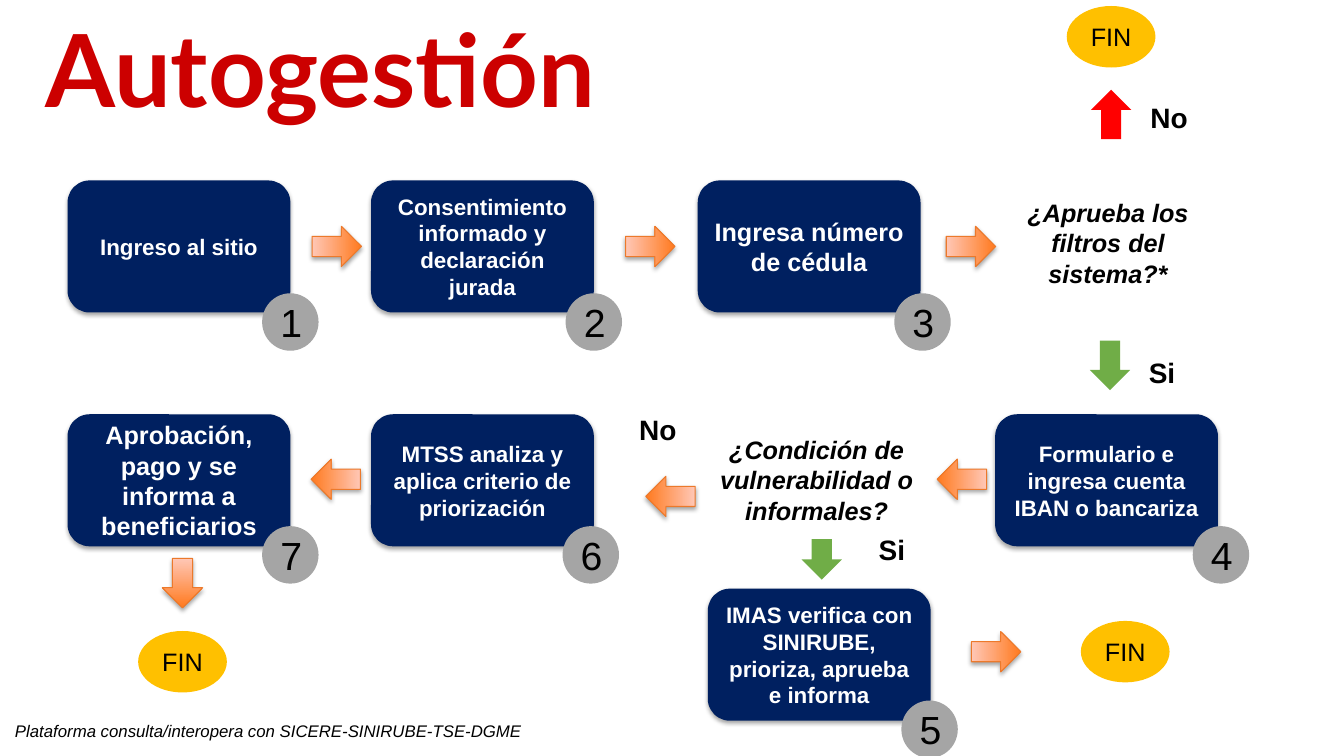
from lxml import etree
from pptx import Presentation
from pptx import util as u
from pptx.dml.color import RGBColor
from pptx.enum import shapes, text
from pptx.oxml.ns import qn

PX = u.Inches(1) // 100
HUES = {
    "title": "CC0000", "step": "002060", "badge": "A5A5A5", "end": "FFC000",
    "yes": "70AD47", "no": "FF0000", "tip": "FF7A1F", "tail": "FFC7B6",
    "edge": "EC792B", "black": "000000", "white": "FFFFFF",
}
KIND = shapes.MSO_SHAPE
MID = text.PP_ALIGN.CENTER
STEP_W, STEP_H = 221, 131

# left, top, words, size, badge left, badge top
STEPS = [
    (67, 179, "Ingreso al sitio", 16, 260, 291),
    (368, 179, "Consentimiento informado y declaración jurada", 16, 561, 291),
    (692, 179, "Ingresa número de cédula", 18, 887, 291),
    (987, 411, "Formulario e ingresa cuenta IBAN o bancariza", 16, 1183, 522),
    (702, 584, "IMAS verifica con SINIRUBE, prioriza, aprueba e informa", 16,
     894, 695),
    (368, 411, "MTSS analiza y aplica criterio de priorización", 16, 558, 522),
    (67, 411, "Aprobación, pago y se informa a beneficiarios", 18, 260, 522),
]
# left, top, turn
FLOWS = [
    (314, 220, 270), (625, 220, 270), (943, 220, 270),
    (934, 451, 90), (645, 468, 90), (313, 451, 90),
    (968, 622, 270), (161, 554, 0),
]
# left, top, height, turn, hue
FORKS = [(1081, 338, 49, 0, "yes"), (795, 535, 40, 0, "yes"),
         (1082, 89, 49, 180, "no")]
ENDS = [(1058, 6), (137, 626), (1072, 616)]
ASKS = [(981, 191, "¿Aprueba los filtros del sistema?*"),
        (692, 426, "¿Condición de vulnerabilidad o informales?")]
# left, top, width, words
LABELS = [(1127, 348, 51, "Si"), (1127, 95, 65, "No"),
          (620, 404, 65, "No"), (852, 523, 65, "Si")]


def hue(name):
    return RGBColor.from_string(HUES[name])


def write(shape, words, size, ink="black", bold=False, italic=False,
          align=MID, face="Arial"):
    frame = shape.text_frame
    frame.word_wrap = True
    para = frame.paragraphs[0]
    para.text = words
    para.alignment = align
    font = para.font
    font.name, font.size = face, u.Pt(size)
    font.bold, font.italic = bold, italic
    font.color.rgb = hue(ink)
    return frame


def add_form(slide, kind, box, fill=None):
    """Add a flat preset shape without outline or shadow."""
    shape = slide.shapes.add_shape(kind, *(n * PX for n in box))
    shape.shadow.inherit = False
    shape.line.fill.background()
    if fill:
        shape.fill.solid()
        shape.fill.fore_color.rgb = hue(fill)
    return shape


def add_text(slide, box, words, size, **style):
    shape = slide.shapes.add_textbox(*(n * PX for n in box))
    return write(shape, words, size, **style)


def cast(shape):
    """Give the shape a soft shadow straight below it."""
    effects = shape._element.spPr.find(qn("a:effectLst"))
    shade = etree.SubElement(effects, qn("a:outerShdw"), blurRad="40000",
                             dist="23000", dir="5400000", rotWithShape="0")
    tint = etree.SubElement(shade, qn("a:srgbClr"), val=HUES["black"])
    etree.SubElement(tint, qn("a:alpha"), val="35000")


def add_step(slide, left, top, words, size):
    shape = add_form(slide, KIND.ROUNDED_RECTANGLE,
                     (left, top, STEP_W, STEP_H), "step")
    cast(shape)
    write(shape, words, size, "white", bold=True)


def add_oval(slide, box, fill, words, size):
    write(add_form(slide, KIND.OVAL, box, fill), words, size)


def add_flow(slide, left, top, turn):
    arrow = add_form(slide, KIND.DOWN_ARROW, (left, top, 40, 49))
    arrow.rotation = turn
    arrow.fill.gradient()
    arrow.fill.gradient_angle = 90
    for stop, name in zip(arrow.fill.gradient_stops, ("tip", "tail")):
        stop.color.rgb = hue(name)
    arrow.line.color.rgb = hue("edge")
    arrow.line.width = u.Pt(0.75)
    cast(arrow)


def add_fork(slide, left, top, height, turn, fill):
    arrow = add_form(slide, KIND.DOWN_ARROW, (left, top, 40, height), fill)
    arrow.rotation = turn


def main():
    deck = Presentation()
    deck.slide_width, deck.slide_height = 1333 * PX, 750 * PX
    slide = deck.slides.add_slide(deck.slide_layouts[6])

    title = add_text(slide, (35, 2, 967, 145), "Autogestión", 72, ink="title",
                     bold=True, align=text.PP_ALIGN.LEFT, face="Lato")
    title.vertical_anchor = text.MSO_ANCHOR.MIDDLE
    title.paragraphs[0].line_spacing = 0.9

    for *step, _, _ in STEPS:
        add_step(slide, *step)
    for rank, (*_, left, top) in enumerate(STEPS, 1):
        add_oval(slide, (left, top, 56, 57), "badge", str(rank), 28)
    for flow in FLOWS:
        add_flow(slide, *flow)
    for fork in FORKS:
        add_fork(slide, *fork)
    for left, top in ENDS:
        add_oval(slide, (left, top, 88, 61), "end", "FIN", 18)
    for left, top, words in ASKS:
        add_text(slide, (left, top, 236, 101), words, 18,
                 bold=True, italic=True)
    for left, top, width, words in LABELS:
        add_text(slide, (left, top, width, 44), words, 20, bold=True)
    add_text(slide, (5, 710, 725, 30),
             "Plataforma consulta/interopera con SICERE-SINIRUBE-TSE-DGME",
             12, italic=True, align=text.PP_ALIGN.LEFT)

    deck.save("out.pptx")


if __name__ == "__main__":
    main()
